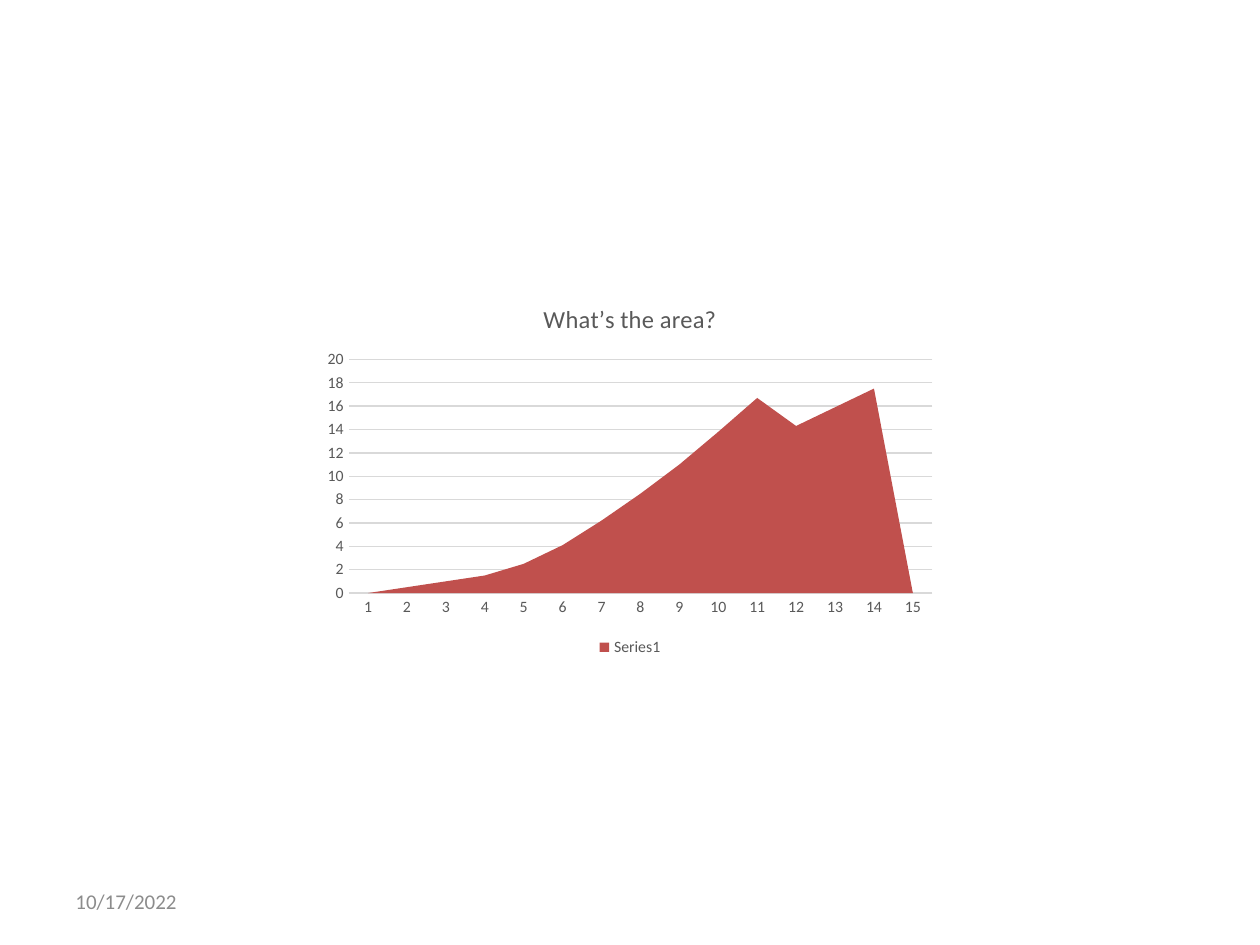
import pptx
import pptx.chart.data
import pptx.dml.color
import pptx.enum.chart
import pptx.enum.text
import pptx.oxml.ns
import pptx.util

Pt = pptx.util.Pt
GREY = "595959"
GRID = "D9D9D9"
RED = "C0504D"
VALUES = [0, 0.5, 1, 1.5, 2.5, 4.1, 6.2, 8.5, 11, 13.8, 16.7, 14.3, 15.9, 17.5, 0]


def rgb(value):
    return pptx.dml.color.RGBColor.from_string(value)


def assign(obj, values):
    for name, value in values.items():
        setattr(obj, name, value)


class SlideBuilder:
    font = "Calibri"

    def __init__(self, prs):
        self.s = prs.slides.add_slide(prs.slide_layouts[6])

    def style(self, font, size, color):
        assign(font, {"name": self.font, "size": Pt(size), "bold": False})
        font.color.rgb = rgb(color)

    def line(self, fmt, color):
        fmt.line.width = Pt(0.75)
        fmt.line.color.rgb = rgb(color)

    def text(self, text, box, size, color):
        sp = self.s.shapes.add_textbox(*map(Pt, box))
        tf = sp.text_frame
        assign(tf, {"word_wrap": True, "vertical_anchor": pptx.enum.text.MSO_ANCHOR.MIDDLE})
        r = tf.paragraphs[0].add_run()
        r.text = text
        self.style(r.font, size, color)

    def area_chart(self, title, name, values, box, color):
        data = pptx.chart.data.CategoryChartData()
        data.categories = [str(i) for i in range(1, len(values) + 1)]
        data.add_series(name, values)
        kind = pptx.enum.chart.XL_CHART_TYPE.AREA_STACKED
        chart = self.s.shapes.add_chart(kind, *map(Pt, box), data).chart
        self.style(chart.font, 10, "000000")

        assign(chart, {"has_title": True, "has_legend": True})
        chart.chart_title.include_in_layout = False
        r = chart.chart_title.text_frame.paragraphs[0].add_run()
        r.text = title
        self.style(r.font, 14, GREY)

        bottom = pptx.enum.chart.XL_LEGEND_POSITION.BOTTOM
        assign(chart.legend, {"position": bottom, "include_in_layout": False})
        self.style(chart.legend.font, 9, GREY)

        no_tick = pptx.enum.chart.XL_TICK_MARK.NONE
        cat, val = chart.category_axis, chart.value_axis
        for axis in (cat, val):
            assign(axis, {"major_tick_mark": no_tick, "minor_tick_mark": no_tick})
            self.style(axis.tick_labels.font, 9, GREY)
        cat.has_major_gridlines = False
        self.line(cat.format, GRID)
        assign(val, {"minimum_scale": 0, "maximum_scale": 20, "major_unit": 2,
                     "has_major_gridlines": True})
        val.format.line.fill.background()
        self.line(val.major_gridlines.format, GRID)
        val._element.find(pptx.oxml.ns.qn("c:crossBetween")).set("val", "between")

        plot = chart.plots[0]
        plot.vary_by_categories = False
        fill = plot.series[0].format.fill
        fill.solid()
        fill.fore_color.rgb = rgb(color)


def main():
    prs = pptx.Presentation()
    assign(prs, {"slide_width": Pt(720), "slide_height": Pt(540)})
    slide = SlideBuilder(prs)
    slide.text("10/17/2022", (36, 500.5, 168, 28.75), 12, "8C8C8C")
    slide.area_chart("What’s the area?", "Series1", VALUES, (180, 162, 360, 216), RED)
    prs.save("out.pptx")


if __name__ == "__main__":
    main()
